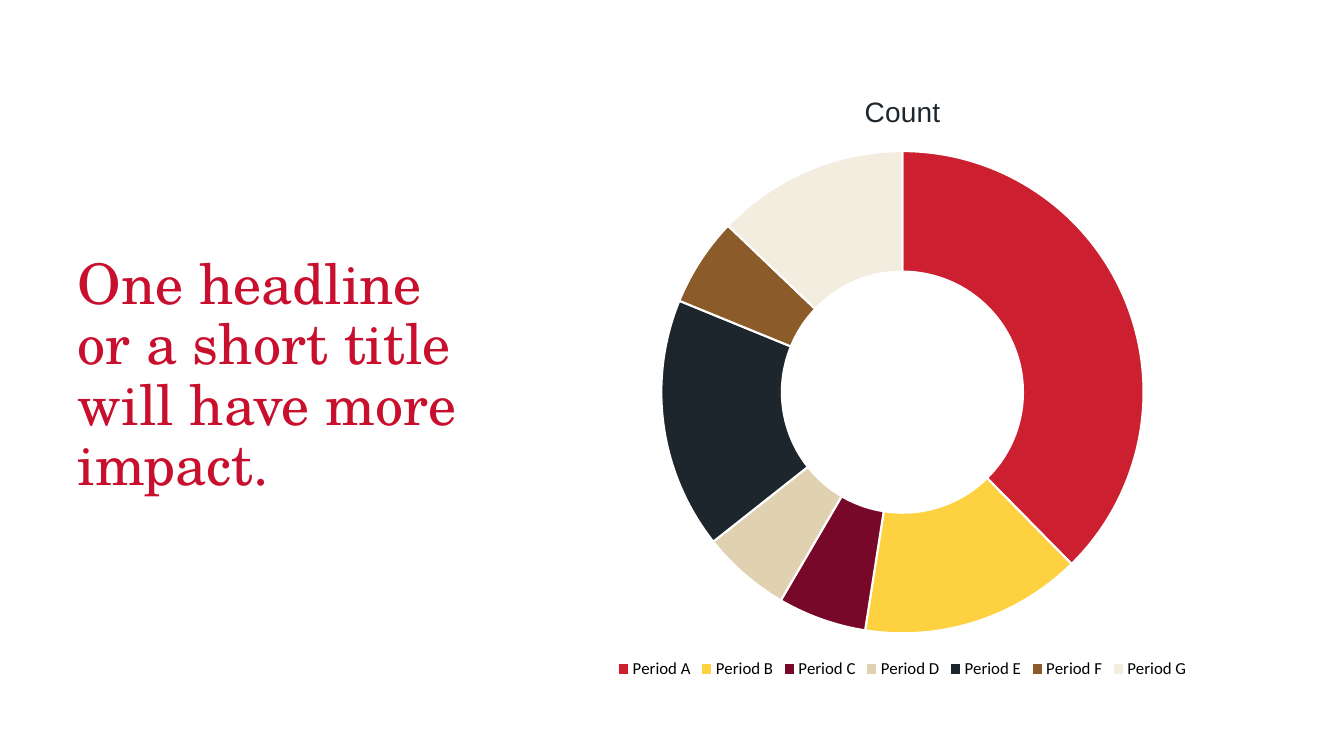
from lxml import etree
from pptx import Presentation, util as u
from pptx.chart.data import CategoryChartData
from pptx.dml.color import RGBColor
from pptx.enum import chart as charts, text
from pptx.oxml.ns import qn

HEADLINE = "One headline or a short title will have more impact."
CHART_TITLE = "Count"
SERIES = "Series 1"
PERIODS = [
    ("Period A", 38, "red"),
    ("Period B", 15, "yellow"),
    ("Period C", 6, "burgundy"),
    ("Period D", 6, "sand"),
    ("Period E", 17, "ink"),
    ("Period F", 6, "brown"),
    ("Period G", 13, "cream"),
]
COLORS = {
    "headline": "C8102E", "red": "CC2030", "yellow": "FED141",
    "burgundy": "78082A", "sand": "E0D1B1", "ink": "1D252D",
    "brown": "8B5B29", "cream": "F3EDE0", "white": "FFFFFF", "black": "000000",
}
PX = 9071  # EMU per px
HEADLINE_BOX = (68, 71, 427, 612)
CHART_BOX = (528, 71, 749, 612)
RING_BOX = (661, 151, 482, 482)


def px(*lengths):
    return [u.Emu(n * PX) for n in lengths]


def rgb(name):
    return RGBColor.from_string(COLORS[name])


def style(font, size, color, name):
    font.size, font.name, font.bold = u.Pt(size), name, False
    font.color.rgb = rgb(color)


def write(tf, content, *, size, color, font, spacing=None):
    p = tf.paragraphs[0]
    p.line_spacing = spacing
    r = p.add_run()
    r.text = content
    style(r.font, size, color, font)


def place_ring(chart):
    """Fix the plot area at RING_BOX, as fractions of the chart frame."""
    left, top, width, height = CHART_BOX
    x, y, w, h = RING_BOX
    plot_area = chart._chartSpace.chart.plotArea
    for old in plot_area.findall(qn("c:layout")):
        plot_area.remove(old)
    layout = etree.Element(qn("c:layout"))
    plot_area.insert(0, layout)
    manual = etree.SubElement(layout, qn("c:manualLayout"))
    settings = [
        ("layoutTarget", "inner"), ("xMode", "edge"), ("yMode", "edge"),
        ("x", round((x - left) / width, 3)), ("y", round((y - top) / height, 3)),
        ("w", round(w / width, 3)), ("h", round(h / height, 3)),
    ]
    for tag, value in settings:
        etree.SubElement(manual, qn(f"c:{tag}")).set("val", str(value))


def add_headline(s):
    tf = s.shapes.add_textbox(*px(*HEADLINE_BOX)).text_frame
    tf.word_wrap = True
    tf.vertical_anchor = text.MSO_ANCHOR.MIDDLE
    write(tf, HEADLINE, size=40, color="headline", font="TeX Gyre Schola", spacing=0.9)


def add_doughnut(s):
    data = CategoryChartData()
    data.categories = [name for name, _, _ in PERIODS]
    data.add_series(SERIES, [count for _, count, _ in PERIODS])
    chart = s.shapes.add_chart(
        charts.XL_CHART_TYPE.DOUGHNUT, *px(*CHART_BOX), data).chart
    style(chart.font, 10, "black", "Calibri")

    chart.has_title = True
    write(chart.chart_title.text_frame, CHART_TITLE, size=20, color="ink", font="Arial")
    chart.chart_title.include_in_layout = False

    chart.has_legend = True
    chart.legend.position = charts.XL_LEGEND_POSITION.BOTTOM
    chart.legend.include_in_layout = False
    style(chart.legend.font, 12, "black", "Calibri")

    plot = chart.plots[0]
    plot.vary_by_categories = True
    for i, (_, _, color) in enumerate(PERIODS):
        fmt = plot.series[0].points[i].format
        fmt.fill.solid()
        fmt.fill.fore_color.rgb = rgb(color)
        fmt.line.color.rgb = rgb("white")
        fmt.line.width = u.Pt(1.5)
    place_ring(chart)


def main():
    prs = Presentation()
    prs.slide_width, prs.slide_height = px(1344, 756)
    s = prs.slides.add_slide(prs.slide_layouts[6])
    add_headline(s)
    add_doughnut(s)
    prs.save("out.pptx")


if __name__ == "__main__":
    main()
